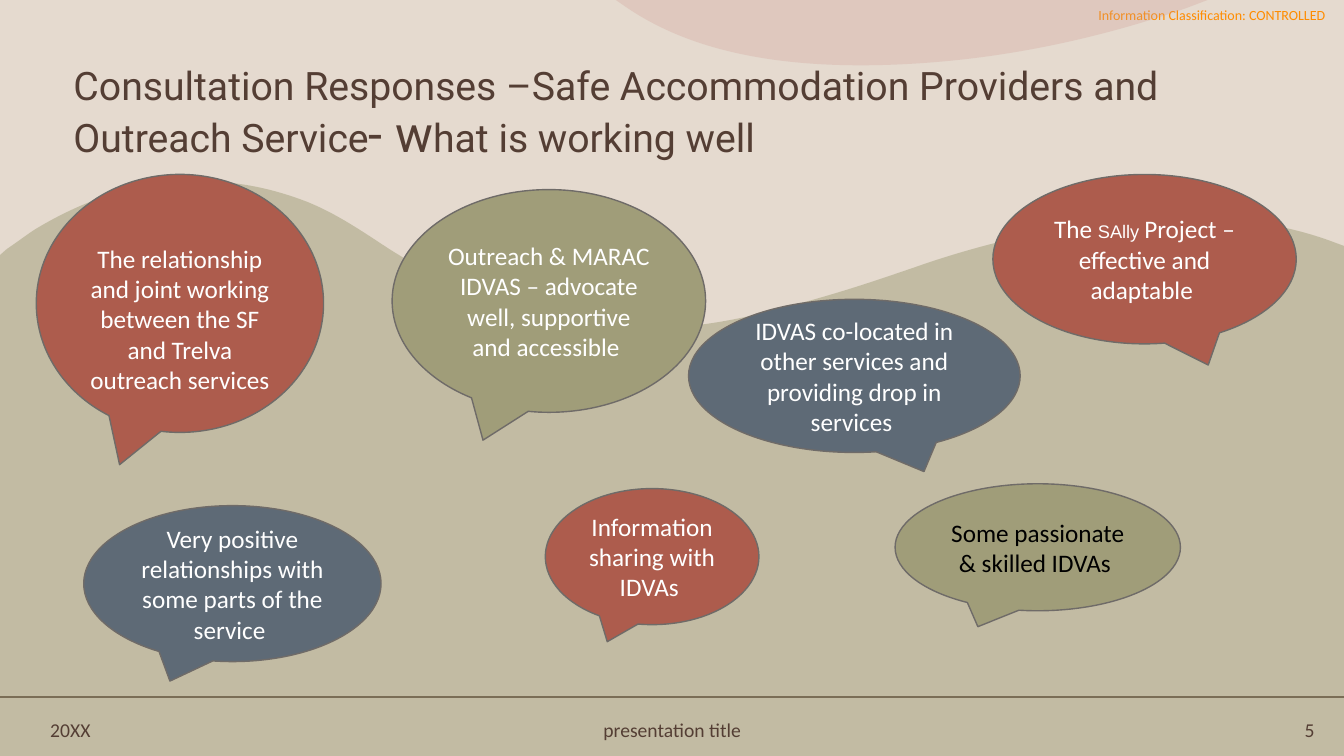
from dataclasses import dataclass

import lxml.etree
import pptx
import pptx.dml.color
import pptx.enum.shapes
import pptx.enum.text
import pptx.oxml.ns
import pptx.util

Pt = pptx.util.Pt
qn = pptx.oxml.ns.qn
ALIGN = pptx.enum.text.PP_ALIGN
SHAPE = pptx.enum.shapes.MSO_SHAPE
Point = tuple[float, float]

SAND, BROWN, OLIVE, BLUSH = "E5DACF", "543E34", "A09D79", "CF9B92"
RUST, SLATE, OUTLINE, WHITE = "AD5C4D", "5E6A76", "6F6B68", "FFFFFF"
TAIL_X, TAIL_Y = 0.21, 0.625
FOOTER_TOP = 497.8


@dataclass
class Span:
    text: str
    size: float
    color: str
    font: str = "Calibri"


@dataclass
class Label:
    left: float
    top: float
    width: float
    height: float
    spans: list[Span]
    align: ALIGN = ALIGN.LEFT
    line_spacing: float = 1.0


@dataclass
class Bubble:
    left: float
    top: float
    width: float
    height: float
    fill: str
    spans: list[Span]
    tail_side: int = -1
    text_drop: float = 0


@dataclass
class Wave:
    color: str
    opacity: int
    start: Point
    segments: list[tuple[Point, ...]]


WAVES = [
    Wave(OLIVE, 50, (145.4, 129.6), [
        ((169.9, 129.6), (194.4, 134.6), (218.9, 144)),
        ((240.5, 152.6), (259.2, 165.6), (277.9, 177.8)),
        ((319, 203.8), (363.6, 223.9), (415.4, 231.8)),
        ((458.6, 238.3), (502.6, 234), (546.5, 223.2)),
        ((595.4, 211), (624.2, 200.9), (653.8, 190.8)),
        ((682.6, 180.7), (835.9, 128.2), (954, 173.5)),
        ((960, 175.7),), ((960, 540),), ((0, 540),), ((0, 182.2),), ((5, 177.8),),
        ((11.5, 173.5), (18, 168.5), (24.5, 164.2)),
        ((64.8, 139.7), (105.1, 128.2), (145.4, 129.6)),
    ]),
    Wave(BLUSH, 27, (439.9, 0), [
        ((862.6, 0),), ((847.4, 5.8),),
        ((761, 36), (691.9, 42.5), (665.3, 44.6)),
        ((544.3, 54), (483.1, 29.5), (447.1, 5)),
    ]),
]

LABELS = [
    Label(45.4, 55.4, 828, 53.3, [
        Span("Consultation Responses –Safe Accommodation Providers and Outreach Service",
             28, BROWN, "Roboto"),
        Span("- w", 36, BROWN, "Roboto"),
        Span("hat is working well", 28, BROWN, "Roboto"),
        Span(" ", 24, BROWN, "Roboto"),
    ], line_spacing=0.9),
    Label(28.8, 509, 77.8, 24.5, [Span("20XX", 14, BROWN)]),
    Label(344.9, 509, 270.7, 24.5, [Span("presentation title", 14, BROWN)], ALIGN.CENTER),
    Label(868.3, 509, 77.8, 24.5, [Span("5", 14, BROWN)], ALIGN.RIGHT),
]
CLASSIFICATION = Label(771.1, 0, 189.4, 20.9, [
    Span("Information Classification: CONTROLLED", 10, "FF8C00")], ALIGN.RIGHT)

BUBBLES = [
    Bubble(25.9, 124.6, 205.2, 184.3, RUST, [
        Span("The relationship and joint working between the SF and Trelva outreach services ",
             18, WHITE)], text_drop=22),
    Bubble(709.2, 124.6, 216.7, 121, RUST, [
        Span("The ", 18, WHITE),
        Span("SAlly ", 13, WHITE, "Arial"),
        Span("Project – effective and adaptable ", 18, WHITE)], tail_side=1),
    Bubble(491.8, 213.8, 236.9, 109.4, SLATE, [
        Span("IDVAS co-located in other services and providing drop in services ",
             18, WHITE)], tail_side=1),
    Bubble(59.8, 361.2, 212.4, 111.4, SLATE, [
        Span("Very positive relationships with some parts of the service ", 18, WHITE)]),
    Bubble(389.5, 349, 152.6, 97.2, RUST, [
        Span("Information sharing with IDVAs ", 18, WHITE)]),
    Bubble(639.4, 345.6, 203.8, 90.7, OLIVE, [
        Span("Some passionate & skilled IDVAs ", 18, "000000")]),
    Bubble(280.1, 135.4, 223.9, 159.1, OLIVE, [
        Span("Outreach & MARAC IDVAS – advocate well, supportive and accessible ",
             18, WHITE)]),
]


def rgb(color: str) -> pptx.dml.color.RGBColor:
    return pptx.dml.color.RGBColor.from_string(color)


def bend(shape, segments: list[tuple[Point, ...]]) -> None:
    lines = list(shape._element.iter(qn("a:lnTo")))
    for line, segment in zip(lines, segments):
        if len(segment) == 3:
            curve = lxml.etree.Element(qn("a:cubicBezTo"))
            for x, y in segment:
                point = lxml.etree.SubElement(curve, qn("a:pt"))
                point.set("x", str(Pt(x) - shape.left))
                point.set("y", str(Pt(y) - shape.top))
            line.getparent().replace(line, curve)


def draw_wave(page, wave: Wave) -> None:
    builder = page.shapes.build_freeform(Pt(wave.start[0]), Pt(wave.start[1]))
    ends = [segment[-1] for segment in wave.segments]
    builder.add_line_segments([(Pt(x), Pt(y)) for x, y in ends], close=True)
    shape = builder.convert_to_shape()
    bend(shape, wave.segments)
    shape.shadow.inherit = False
    shape.fill.solid()
    shape.fill.fore_color.rgb = rgb(wave.color)
    shape.line.fill.background()
    color = shape._element.spPr.find(qn("a:solidFill")).find(qn("a:srgbClr"))
    alpha = lxml.etree.SubElement(color, qn("a:alpha"))
    alpha.set("val", str(wave.opacity * 1000))


def write(frame, spans: list[Span], align: ALIGN, line_spacing: float = 1.0) -> None:
    frame.word_wrap = True
    frame.vertical_anchor = pptx.enum.text.MSO_ANCHOR.MIDDLE
    para = frame.paragraphs[0]
    para.alignment = align
    para.line_spacing = line_spacing
    for span in spans:
        run = para.add_run()
        run.text = span.text
        run.font.size = Pt(span.size)
        run.font.name = span.font
        run.font.color.rgb = rgb(span.color)


def draw_label(page, label: Label):
    box = page.shapes.add_textbox(
        Pt(label.left), Pt(label.top), Pt(label.width), Pt(label.height))
    write(box.text_frame, label.spans, label.align, label.line_spacing)
    return box.text_frame


def draw_classification(page) -> None:
    frame = draw_label(page, CLASSIFICATION)
    frame.margin_left = frame.margin_top = frame.margin_bottom = 0
    frame.margin_right = Pt(14)


def draw_bubble(page, bubble: Bubble) -> None:
    shape = page.shapes.add_shape(
        SHAPE.OVAL_CALLOUT, Pt(bubble.left), Pt(bubble.top),
        Pt(bubble.width), Pt(bubble.height))
    shape.adjustments[0] = bubble.tail_side * TAIL_X
    shape.adjustments[1] = TAIL_Y
    shape.shadow.inherit = False
    shape.fill.solid()
    shape.fill.fore_color.rgb = rgb(bubble.fill)
    shape.line.color.rgb = rgb(OUTLINE)
    shape.line.width = Pt(1)
    shape.text_frame.margin_top = Pt(3.6 + bubble.text_drop)
    write(shape.text_frame, bubble.spans, ALIGN.CENTER)


def draw_footer_line(page) -> None:
    line = page.shapes.add_connector(
        pptx.enum.shapes.MSO_CONNECTOR.STRAIGHT,
        0, Pt(FOOTER_TOP), Pt(960), Pt(FOOTER_TOP))
    line.line.color.rgb = rgb(BROWN)
    line.line.width = Pt(1.25)
    lxml.etree.SubElement(line._element.spPr, qn("a:effectLst"))


def main() -> None:
    deck = pptx.Presentation()
    deck.slide_width, deck.slide_height = Pt(960), Pt(540)
    page = deck.slides.add_slide(deck.slide_layouts[6])
    page.background.fill.solid()
    page.background.fill.fore_color.rgb = rgb(SAND)
    draw_footer_line(page)
    draw_classification(page)
    for wave in WAVES:
        draw_wave(page, wave)
    for label in LABELS:
        draw_label(page, label)
    for bubble in BUBBLES:
        draw_bubble(page, bubble)
    deck.save("out.pptx")


if __name__ == "__main__":
    main()
